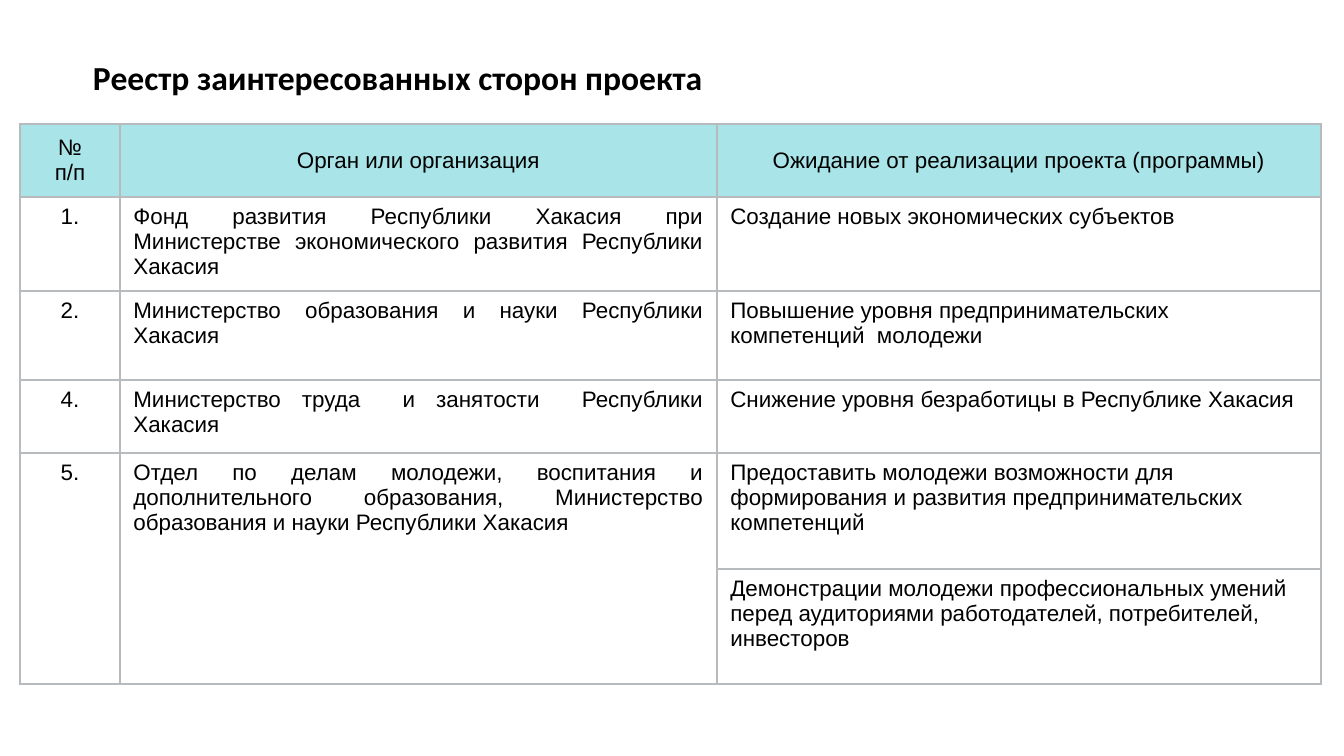
from dataclasses import dataclass

from lxml.etree import SubElement
from pptx import Presentation
from pptx.dml.color import RGBColor
from pptx.enum.text import MSO_ANCHOR, PP_ALIGN
from pptx.oxml.ns import qn
from pptx.util import Pt

SCALE = 9144000 / 1344  # EMU in one px


@dataclass(frozen=True)
class Theme:
    ink: str = "000000"
    head: str = "A9E5E8"
    body: str = "FFFFFF"
    rule: str = "B7BBBE"
    title: tuple = ("Calibri", 18, True)
    cell: tuple = ("Arial", 12, False)


THEME = Theme()

COLS = [100, 597, 604]
ROWS = [73, 94, 89, 73, 116, 115]
ALIGNS = [PP_ALIGN.CENTER, PP_ALIGN.JUSTIFY, PP_ALIGN.LEFT]
HEAD = ["№\nп/п", "Орган или организация", "Ожидание от реализации проекта (программы)"]
BODY = [
    ["1.",
     "Фонд развития Республики Хакасия при Министерстве экономического развития Республики Хакасия",
     "Создание новых экономических субъектов"],
    ["2.",
     "Министерство образования и науки Республики Хакасия",
     "Повышение уровня предпринимательских компетенций  молодежи"],
    ["4.",
     "Министерство труда  и занятости  Республики Хакасия",
     "Снижение уровня безработицы в Республике Хакасия"],
    ["5.",
     "Отдел по делам молодежи, воспитания и дополнительного образования, "
     "Министерство образования и науки Республики Хакасия",
     "Предоставить молодежи возможности для формирования и развития "
     "предпринимательских компетенций"],
    ["", "",
     "Демонстрации молодежи профессиональных умений перед аудиториями "
     "работодателей, потребителей, инвесторов"],
]


def px(num):
    return round(num * SCALE)


def assign(item, values):
    for name, value in values.items():
        setattr(item, name, value)


def write(frame, text, style, align):
    face, size, bold = style
    frame.text = text
    for para in frame.paragraphs:
        para.alignment = align
        assign(para.font, {"name": face, "size": Pt(size), "bold": bold})
        para.font.color.rgb = RGBColor.from_string(THEME.ink)


def border(cell):
    props = cell._tc.get_or_add_tcPr()
    for side in ("lnL", "lnR", "lnT", "lnB"):
        line = SubElement(props, qn(f"a:{side}"), w=str(Pt(1)))
        fill = SubElement(line, qn("a:solidFill"))
        SubElement(fill, qn("a:srgbClr"), val=THEME.rule)


def paint(cell, color):
    """Fill the cell; its borders must come first in the XML."""
    border(cell)
    cell.fill.solid()
    cell.fill.fore_color.rgb = RGBColor.from_string(color)


def add_title(slide, box, text):
    frame = slide.shapes.add_textbox(*map(px, box)).text_frame
    assign(frame, {
        "word_wrap": True, "vertical_anchor": MSO_ANCHOR.TOP,
        "margin_left": 0, "margin_right": 0, "margin_top": 0, "margin_bottom": 0,
    })
    write(frame, text, THEME.title, PP_ALIGN.LEFT)


def add_register(slide, box):
    data = [HEAD] + BODY
    table = slide.shapes.add_table(len(ROWS), len(COLS), *map(px, box)).table
    assign(table, {"first_row": False, "horz_banding": False})
    for col, width in zip(table.columns, COLS):
        col.width = px(width)
    for row, height in zip(table.rows, ROWS):
        row.height = px(height)
    for r, texts in enumerate(data):
        for c, text in enumerate(texts):
            cell = table.cell(r, c)
            align = ALIGNS[c] if r else PP_ALIGN.CENTER
            write(cell.text_frame, text, THEME.cell, align)
            cell.vertical_anchor = MSO_ANCHOR.TOP if r else MSO_ANCHOR.MIDDLE
            paint(cell, THEME.body if r else THEME.head)
    last = len(ROWS) - 1
    for c in (0, 1):
        table.cell(last - 1, c).merge(table.cell(last, c))


def main():
    deck = Presentation()
    assign(deck, {"slide_width": px(1344), "slide_height": px(756)})
    slide = deck.slides.add_slide(deck.slide_layouts[6])
    add_title(slide, (93, 57, 1012, 101), "Реестр заинтересованных сторон проекта")
    add_register(slide, (20, 124, sum(COLS), sum(ROWS)))
    deck.save("out.pptx")


if __name__ == "__main__":
    main()
